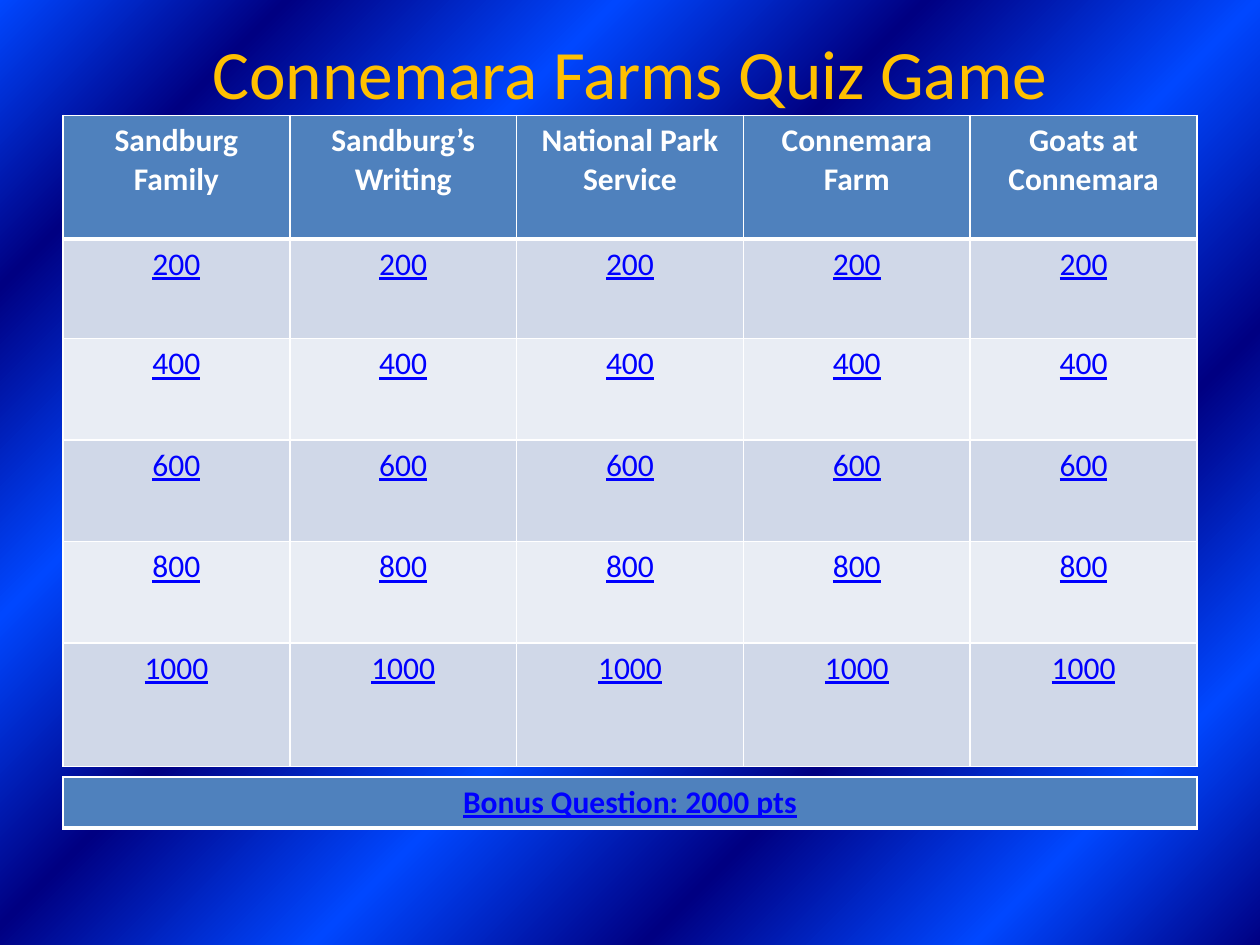
from lxml.etree import SubElement
from pptx import Presentation
from pptx.dml.color import RGBColor
from pptx.enum.text import MSO_ANCHOR, MSO_AUTO_SIZE, PP_ALIGN
from pptx.oxml import parse_xml
from pptx.oxml.ns import nsdecls, qn
from pptx.util import Pt

FONT = "Calibri"
WHITE, LINK, GOLD = "FFFFFF", "0000FF", "FFC000"
HEADER_FILL, BAND_FILLS = "4F81BD", ("D0D8E8", "E9EDF4")
CATEGORIES = ["Sandburg Family", "Sandburg’s Writing", "National Park Service",
              "Connemara Farm", "Goats at Connemara"]
POINTS = [200, 400, 600, 800, 1000]
LEFT, WIDTH = 36, 648


def color(hex_value):
    return RGBColor.from_string(hex_value)


def add_text(frame, text, size, hex_value, bold=False, underline=False):
    para = frame.paragraphs[0]
    para.alignment = PP_ALIGN.CENTER
    span = para.add_run()
    span.text = text
    span.font.name = FONT
    span.font.size = Pt(size)
    span.font.bold = bold
    span.font.underline = underline
    span.font.color.rgb = color(hex_value)


def paint_background(page):
    """Alternate navy and bright blue, spreading from the lower right corner."""
    positions = [0, 13, 28, 43, 58, 72, 87, 100]
    stops = "".join(
        f'<a:gs pos="{position * 1000}"><a:srgbClr val="{("000082", "0047FF")[i % 2]}"/></a:gs>'
        for i, position in enumerate(positions))
    gradient = parse_xml(
        f'<a:gradFill {nsdecls("a")} rotWithShape="1"><a:gsLst>{stops}</a:gsLst>'
        '<a:path path="circle"><a:fillToRect l="100000" t="100000"/></a:path></a:gradFill>')
    page.background.fill.solid()
    solid = page._element.find(".//" + qn("p:bgPr")).find(qn("a:solidFill"))
    solid.getparent().replace(solid, gradient)


def set_borders(cell, top=1, bottom=1):
    properties = cell._tc.get_or_add_tcPr()
    sides = [("a:lnL", 1), ("a:lnR", 1), ("a:lnT", top), ("a:lnB", bottom)]
    for index, (tag, width) in enumerate(sides):
        line = SubElement(properties, qn(tag), w=str(Pt(width)))
        SubElement(SubElement(line, qn("a:solidFill")), qn("a:srgbClr"), val=WHITE)
        properties.insert(index, line)


def fill_cell(cell, text, fill, text_color, bold=False, underline=False, top=1, bottom=1):
    cell.fill.solid()
    cell.fill.fore_color.rgb = color(fill)
    set_borders(cell, top, bottom)
    add_text(cell.text_frame, text, 18, text_color, bold, underline)


def add_grid(page, top, heights, column_count):
    frame = page.shapes.add_table(len(heights), column_count, Pt(LEFT), Pt(top),
                                  Pt(WIDTH), Pt(sum(heights)))
    table = frame.table
    for row, height in zip(table.rows, heights):
        row.height = Pt(height)
    for column in table.columns:
        column.width = Pt(WIDTH / column_count)
    return table


def add_title(page, text):
    box = page.shapes.title
    box.left, box.top, box.width, box.height = Pt(LEFT), Pt(21.6), Pt(WIDTH), Pt(38.4)
    frame = box.text_frame
    frame.word_wrap = True
    frame.auto_size = MSO_AUTO_SIZE.NONE
    frame.vertical_anchor = MSO_ANCHOR.MIDDLE
    add_text(frame, text, 39.6, GOLD)


def add_board(page):
    board = add_grid(page, 66, [70.5, 57, 58, 58, 58, 70.5], len(CATEGORIES))
    for column, category in enumerate(CATEGORIES):
        fill_cell(board.cell(0, column), category, HEADER_FILL, WHITE, bold=True, bottom=3)
        for row, value in enumerate(POINTS, start=1):
            fill_cell(board.cell(row, column), str(value), BAND_FILLS[(row - 1) % 2], LINK,
                      underline=True, top=3 if row == 1 else 1)


def add_bonus(page):
    bonus = add_grid(page, 444, [29.2], 1)
    fill_cell(bonus.cell(0, 0), "Bonus Question: 2000 pts", HEADER_FILL, LINK,
              bold=True, underline=True, bottom=3)


def main():
    deck = Presentation()
    deck.slide_width, deck.slide_height = Pt(720), Pt(540)
    page = deck.slides.add_slide(deck.slide_layouts[5])
    paint_background(page)
    add_title(page, "Connemara Farms Quiz Game")
    # Categories with their point values, then the bonus bar
    add_board(page)
    add_bonus(page)
    deck.save("out.pptx")


if __name__ == "__main__":
    main()
